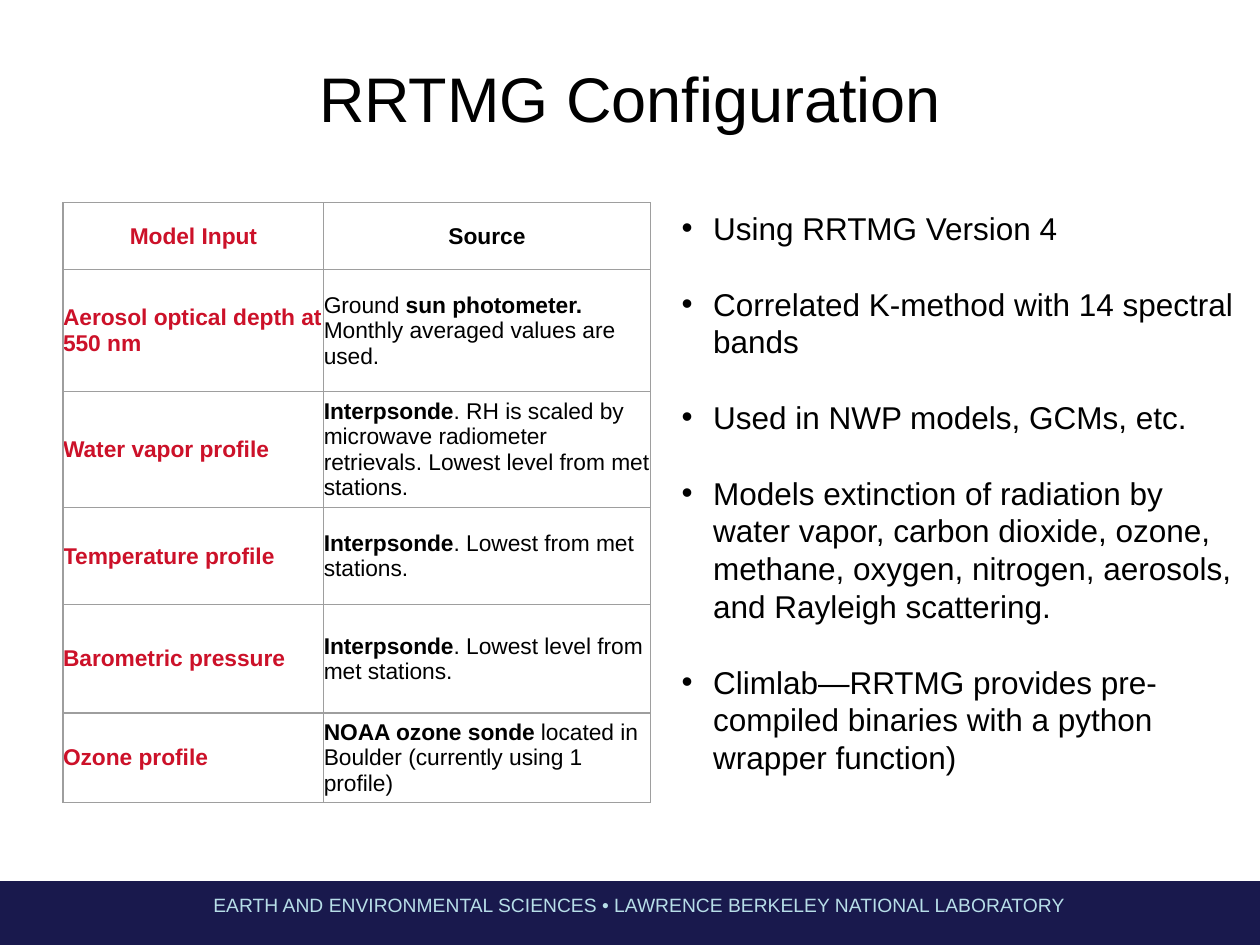
"""Build the RRTMG configuration slide: input table, notes and footer band."""
from dataclasses import dataclass

from lxml import etree
from pptx import Presentation
from pptx import util as u
from pptx.dml.color import RGBColor
from pptx.enum import shapes, text
from pptx.oxml.ns import qn

FONT = "Arial"
BLACK, RED, NAVY, PALE_BLUE, GREY = "000000", "CC1129", "19194D", "B7DEE8", "9E9E9E"
CENTER, LEFT = text.PP_ALIGN.CENTER, text.PP_ALIGN.LEFT
MIDDLE, TOP = text.MSO_ANCHOR.MIDDLE, text.MSO_ANCHOR.TOP


@dataclass(frozen=True)
class Span:
    content: str
    bold: bool = False


@dataclass(frozen=True)
class InputRow:
    name: str
    source: tuple[Span, ...]
    height: float


@dataclass(frozen=True)
class Area:
    left: float
    top: float
    width: float
    height: float

    def lengths(self) -> list[u.Pt]:
        return [u.Pt(value) for value in (self.left, self.top, self.width, self.height)]


HEADER_HEIGHT = 38.16
COLUMN_WIDTHS = (149.04, 186.48)
ROWS = (
    InputRow("Aerosol optical depth at 550 nm",
             (Span("Ground "), Span("sun photometer.", True),
              Span(" Monthly averaged values are used.")), 69.84),
    InputRow("Water vapor profile",
             (Span("Interpsonde", True),
              Span(". RH is scaled by microwave radiometer retrievals. "
                   "Lowest level from met stations.")), 66.24),
    InputRow("Temperature profile",
             (Span("Interpsonde", True), Span(". Lowest from met stations.")), 55.44),
    InputRow("Barometric pressure",
             (Span("Interpsonde", True), Span(". Lowest level from met stations.")), 61.92),
    InputRow("Ozone profile",
             (Span("NOAA ozone sonde", True),
              Span(" located in Boulder (currently using 1 profile)")), 51.12),
)
NOTES = (
    "Using RRTMG Version 4",
    "Correlated K-method with 14 spectral bands",
    "Used in NWP models, GCMs, etc.",
    "Models extinction of radiation by water vapor, carbon dioxide, ozone, methane, "
    "oxygen, nitrogen, aerosols, and Rayleigh scattering.",
    "Climlab—RRTMG provides pre-compiled binaries with a python wrapper function)",
)


def color(value: str) -> RGBColor:
    return RGBColor.from_string(value)


def style_font(font, size: float, fill: str, bold: bool = False) -> None:
    font.name, font.size, font.bold = FONT, u.Pt(size), bold
    font.color.rgb = color(fill)


def add_box(slide, area: Area, inset: float, anchor=TOP):
    frame = slide.shapes.add_textbox(*area.lengths()).text_frame
    frame.word_wrap = True
    frame.vertical_anchor = anchor
    frame.margin_left = frame.margin_right = u.Pt(inset)
    frame.margin_top = frame.margin_bottom = u.Pt(inset)
    return frame


def add_line(slide, area: Area, content: str, size: float, fill: str, anchor=TOP) -> None:
    frame = add_box(slide, area, 3.6, anchor)
    frame.text = content
    para = frame.paragraphs[0]
    para.alignment = CENTER
    style_font(para.runs[0].font, size, fill)


def add_band(slide, area: Area, fill: str) -> None:
    band = slide.shapes.add_shape(shapes.MSO_SHAPE.RECTANGLE, *area.lengths())
    band.shadow.inherit = False
    band.fill.solid()
    band.fill.fore_color.rgb = color(fill)
    band.line.fill.background()


def set_borders(cell, fill: str, width: float) -> None:
    properties = cell._tc.get_or_add_tcPr()
    for position, side in enumerate(("a:lnL", "a:lnR", "a:lnT", "a:lnB")):
        line = etree.Element(qn(side), w=str(u.Pt(width)))
        solid = etree.SubElement(line, qn("a:solidFill"))
        etree.SubElement(solid, qn("a:srgbClr"), val=fill)
        properties.insert(position, line)


def fill_cell(cell, spans: tuple[Span, ...], fill: str, alignment) -> None:
    cell.margin_left = cell.margin_right = cell.margin_top = cell.margin_bottom = 0
    cell.vertical_anchor = MIDDLE
    cell.fill.background()
    set_borders(cell, GREY, 0.75)
    para = cell.text_frame.paragraphs[0]
    para.alignment = alignment
    para.line_spacing = u.Pt(14.5)
    for span in spans:
        run = para.add_run()
        run.text = span.content
        style_font(run.font, 13, fill, span.bold)


def add_input_table(slide, left: float, top: float) -> None:
    heights = (HEADER_HEIGHT, *(row.height for row in ROWS))
    area = Area(left, top, sum(COLUMN_WIDTHS), sum(heights))
    table = slide.shapes.add_table(len(heights), len(COLUMN_WIDTHS), *area.lengths()).table
    table.horz_banding = table.first_row = False
    for column, width in zip(table.columns, COLUMN_WIDTHS):
        column.width = u.Pt(width)
    for row, height in zip(table.rows, heights):
        row.height = u.Pt(height)
    fill_cell(table.cell(0, 0), (Span("Model Input", True),), RED, CENTER)
    fill_cell(table.cell(0, 1), (Span("Source", True),), BLACK, CENTER)
    for index, entry in enumerate(ROWS, start=1):
        fill_cell(table.cell(index, 0), (Span(entry.name, True),), RED, LEFT)
        fill_cell(table.cell(index, 1), entry.source, BLACK, LEFT)


def add_notes(slide, area: Area, size: float, pitch: float, indent: float) -> None:
    frame = add_box(slide, area, 0)
    for index, note in enumerate(NOTES):
        para = frame.add_paragraph() if index else frame.paragraphs[0]
        para.text = note
        properties = para._p.get_or_add_pPr()
        properties.set("marL", str(u.Pt(indent)))
        properties.set("indent", str(-u.Pt(indent)))
        etree.SubElement(properties, qn("a:buFont"), typeface=FONT)
        etree.SubElement(properties, qn("a:buChar"), char="•")
        para.line_spacing = u.Pt(pitch)
        if index:
            para.space_before = u.Pt(pitch)
        style_font(para.runs[0].font, size, BLACK)


def main() -> None:
    deck = Presentation()
    deck.slide_width, deck.slide_height = u.Pt(720), u.Pt(540)
    slide = deck.slides.add_slide(deck.slide_layouts[6])
    add_band(slide, Area(0, 503.5, 720, 36.5), NAVY)
    add_line(slide, Area(116.5, 507, 498, 19),
             "EARTH AND ENVIRONMENTAL SCIENCES • LAWRENCE BERKELEY NATIONAL LABORATORY",
             11, PALE_BLUE)
    add_line(slide, Area(60, 21.6, 600, 68.4), "RRTMG Configuration", 36, BLACK, MIDDLE)
    add_input_table(slide, 36, 115.9)
    add_notes(slide, Area(389.5, 119.5, 318.25, 314.65), 18, 21.6, 18)
    deck.save("out.pptx")


if __name__ == "__main__":
    main()
